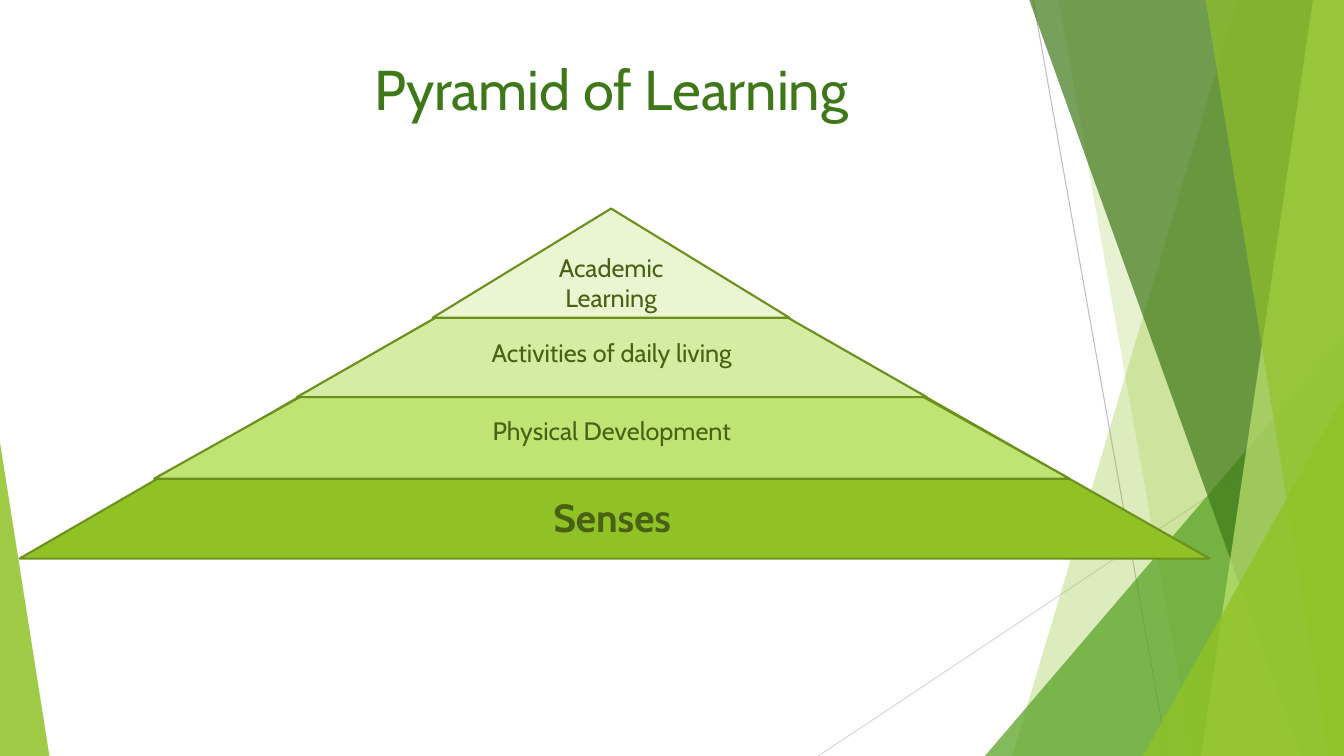
from dataclasses import dataclass

import pptx
import pptx.dml.color
import pptx.enum.shapes
import pptx.enum.text
import pptx.oxml.ns
import pptx.oxml.xmlchemy
import pptx.util

Pt = pptx.util.Pt
Anchor = pptx.enum.text.MSO_ANCHOR


@dataclass(frozen=True)
class Theme:
    font: str = "Cabin"
    green: str = "90C226"
    grass: str = "54A021"
    forest: str = "3F7819"
    lime: str = "C0E474"
    pale_lime: str = "D5EDA2"
    mist: str = "EAF6D1"
    ink: str = "486113"
    base_edge: str = "6C921D"
    tier_edge: str = "6B901C"
    gray: str = "BFBFBF"
    light_gray: str = "D9D9D9"
    title_size: float = 40
    base_size: float = 28
    tier_size: float = 18
    edge_width: float = 1.5
    hairline: float = 0.75


THEME = Theme()
WIDTH, HEIGHT = 960, 540
SHARD_TOP = -0.7


@dataclass(frozen=True)
class Ray:
    """Thin background line."""
    start: tuple[float, float]
    end: tuple[float, float]
    color: str


@dataclass(frozen=True)
class Shard:
    """Translucent panel running from its slanted left side to the right slide edge."""
    top_left: float
    bottom_left: float
    color: str
    opacity: int


@dataclass(frozen=True)
class Wedge:
    """Translucent triangle standing on the bottom slide edge."""
    left: float
    top: float
    width: float
    apex: float
    color: str
    opacity: int


@dataclass(frozen=True)
class Tier:
    """Pyramid level, a full triangle partly covered by the levels above."""
    text: str
    left: float
    top: float
    width: float
    height: float
    color: str
    edge: str = THEME.tier_edge
    apex: float = 0.5
    size: float = THEME.tier_size
    bold: bool = False
    anchor: Anchor = Anchor.MIDDLE
    inset_top: float = 3.6
    inset_bottom: float = 3.6


RAYS = [
    Ray((738, 0), (834, HEIGHT), THEME.gray),
    Ray((WIDTH, 290), (584.5, HEIGHT), THEME.light_gray),
]

DECORATION = [
    Shard(884, 723, THEME.green, 30),
    Shard(756, 852, THEME.green, 20),
    Wedge(703.5, 240, 256.5, 1, THEME.grass, 72),
    Shard(735, 929.5, THEME.forest, 70),
    Shard(938, 858, THEME.lime, 70),
    Shard(861, 949, THEME.green, 65),
    Wedge(816.5, 283, 143.5, 1, THEME.green, 80),
    Wedge(0, 316, 35.3, 0, THEME.green, 85),
]

TIERS = [
    Tier("Senses", 14, 155, 850, 244, THEME.green, edge=THEME.base_edge, apex=0.496,
         size=THEME.base_size, bold=True, anchor=Anchor.BOTTOM, inset_bottom=13.3),
    Tier("Physical Development", 110, 159, 654, 183, THEME.lime, inset_top=25.5),
    Tier("Activities of daily living", 212, 155, 450, 128.7, THEME.pale_lime),
    Tier("Academic Learning", 309, 149, 255, 78, THEME.mist, anchor=Anchor.BOTTOM),
]


def rgb(color: str) -> pptx.dml.color.RGBColor:
    return pptx.dml.color.RGBColor.from_string(color)


def paint(shape, color: str, opacity: int = 100) -> None:
    """Flat fill without shadow or outline."""
    shape.shadow.inherit = False
    shape.fill.solid()
    shape.fill.fore_color.rgb = rgb(color)
    shape.line.fill.background()
    if opacity < 100:
        tint = shape._element.spPr.find(".//" + pptx.oxml.ns.qn("a:srgbClr"))
        alpha = pptx.oxml.xmlchemy.OxmlElement("a:alpha")
        alpha.set("val", str(opacity * 1000))
        tint.append(alpha)


def write_text(shape, text: str, *, size: float, color: str, bold: bool = False,
               anchor: Anchor = Anchor.TOP, inset_top: float = 3.6,
               inset_bottom: float = 3.6) -> None:
    frame = shape.text_frame
    frame.word_wrap = True
    frame.vertical_anchor = anchor
    frame.margin_top, frame.margin_bottom = Pt(inset_top), Pt(inset_bottom)
    para = frame.paragraphs[0]
    para.alignment = pptx.enum.text.PP_ALIGN.CENTER
    span = para.add_run()
    span.text = text
    span.font.name = THEME.font
    span.font.size = Pt(size)
    span.font.bold = bold
    span.font.color.rgb = rgb(color)


def add_triangle(page, left: float, top: float, width: float, height: float, apex: float):
    triangle = page.shapes.add_shape(
        pptx.enum.shapes.MSO_SHAPE.ISOSCELES_TRIANGLE,
        Pt(left), Pt(top), Pt(width), Pt(height))
    triangle.adjustments[0] = apex
    return triangle


def draw_ray(page, ray: Ray) -> None:
    line = page.shapes.add_connector(
        pptx.enum.shapes.MSO_CONNECTOR.STRAIGHT, *map(Pt, ray.start + ray.end))
    line.line.color.rgb = rgb(ray.color)
    line.line.width = Pt(THEME.hairline)
    line._element.spPr.append(pptx.oxml.xmlchemy.OxmlElement("a:effectLst"))


def draw_shard(page, shard: Shard) -> None:
    outline = page.shapes.build_freeform(Pt(shard.top_left), Pt(SHARD_TOP))
    corners = [(WIDTH, SHARD_TOP), (WIDTH, HEIGHT), (shard.bottom_left, HEIGHT)]
    outline.add_line_segments([(Pt(x), Pt(y)) for x, y in corners], close=True)
    paint(outline.convert_to_shape(), shard.color, shard.opacity)


def draw_wedge(page, wedge: Wedge) -> None:
    triangle = add_triangle(page, wedge.left, wedge.top, wedge.width,
                            HEIGHT - wedge.top, wedge.apex)
    paint(triangle, wedge.color, wedge.opacity)


def draw_tier(page, tier: Tier) -> None:
    triangle = add_triangle(page, tier.left, tier.top, tier.width, tier.height, tier.apex)
    paint(triangle, tier.color)
    triangle.line.color.rgb = rgb(tier.edge)
    triangle.line.width = Pt(THEME.edge_width)
    write_text(triangle, tier.text, size=tier.size, color=THEME.ink, bold=tier.bold,
               anchor=tier.anchor, inset_top=tier.inset_top,
               inset_bottom=tier.inset_bottom)


def main() -> None:
    deck = pptx.Presentation()
    deck.slide_width, deck.slide_height = Pt(WIDTH), Pt(HEIGHT)
    page = deck.slides.add_slide(deck.slide_layouts[6])

    # Background rays, shards and wedges
    for ray in RAYS:
        draw_ray(page, ray)
    for part in DECORATION:
        if isinstance(part, Shard):
            draw_shard(page, part)
        else:
            draw_wedge(page, part)

    # Title
    title_box = page.shapes.add_textbox(Pt(122.5), Pt(35.5), Pt(628), Pt(78))
    write_text(title_box, "Pyramid of Learning", size=THEME.title_size, color=THEME.forest)

    # Pyramid, from the base up
    for tier in TIERS:
        draw_tier(page, tier)

    deck.save("out.pptx")


if __name__ == "__main__":
    main()
